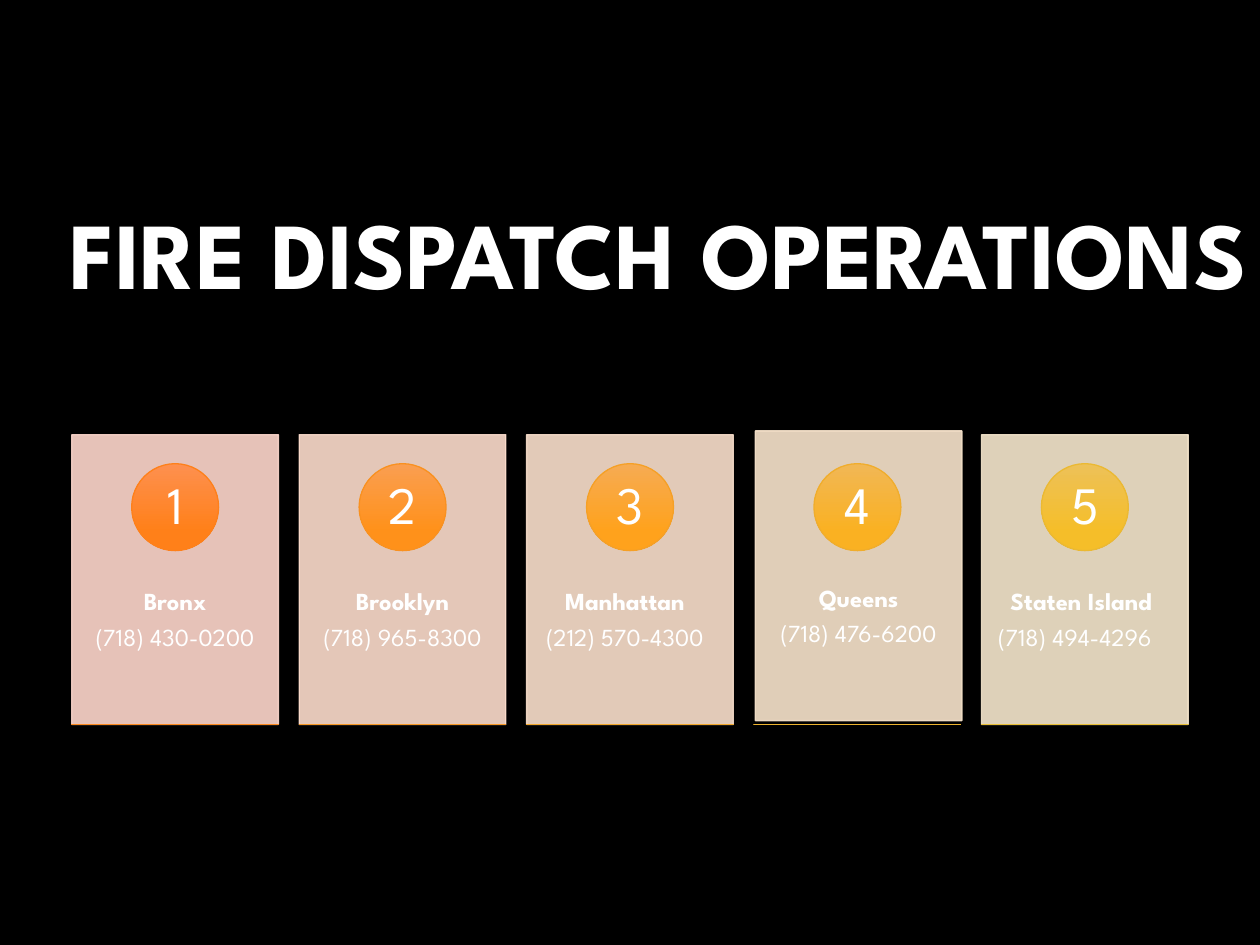
from lxml import etree
from pptx import Presentation
from pptx import util as u
from pptx.dml.color import RGBColor
from pptx.enum import shapes, text
from pptx.oxml import ns

FONT = "League Spartan"
BLACK = RGBColor(0, 0, 0)
WHITE = RGBColor(255, 255, 255)


def palette(codes):
    return [RGBColor.from_string(code) for code in codes.split()]


# One colour per borough, from left to right
CARD_COLORS = palette("FFD8CD FDDDCD FBE1CD F9E5CD F7E8CE")
CIRCLE_TOPS = palette("FE904F FA9E51 F6AB53 F1B755 EDC158")
CIRCLE_BOTTOMS = palette("FF8019 FF911A FFA21C FAB122 F5BE29")
CIRCLE_LINES = palette("FE801A F99120 F5A026 F0AD2C EBB932")
STRIP_TOPS = palette("FC9750 F8A552 F4B154 EFBC56 EBC659")
STRIP_BOTTOMS = palette("FF881A FF991B FCA91F F7B726 F2C42C")
STRIP_LINES = palette("FC891D F79823 F2A729 EEB42F E9BF35")

# Name, phone, card shift (right, down), extra right inset, alignment, name indent
CENTER, LEFT = text.PP_ALIGN.CENTER, text.PP_ALIGN.LEFT
BOROUGHS = [
    ("Bronx", "(718) 430-0200", 0, 0, 0, CENTER, 0),
    ("Brooklyn", "(718) 965-8300", 0, 0, 0, CENTER, 0),
    ("Manhattan", "(212) 570-4300", 0, 0, 0.08, CENTER, 0),
    ("Queens", "(718) 476-6200", 0.01, -0.03, 0, CENTER, 0),
    ("Staten Island", "(718) 494-4296", 0, 0, 0, LEFT, 0.1),
]
CARD_LEFT, CARD_TOP, CARD_WIDTH, CARD_HEIGHT = 0.57, 3.45, 1.64, 2.3
CARD_STEP = 1.805
CIRCLE_TOP, CIRCLE_SIZE = 3.68, 0.69


def style_paragraph(paragraph, size, bold, alignment):
    paragraph.alignment = alignment
    paragraph.line_spacing = 0.9
    for run in paragraph.runs:
        run.font.name = FONT
        run.font.size = u.Pt(size)
        run.font.bold = bold
        run.font.color.rgb = WHITE


presentation = Presentation()
presentation.slide_width = u.Inches(10)
presentation.slide_height = u.Inches(7.5)
slide = presentation.slides.add_slide(presentation.slide_layouts[6])
slide.background.fill.solid()
slide.background.fill.fore_color.rgb = BLACK

# Title, set below the middle of its box
title = slide.shapes.add_textbox(u.Inches(0), u.Inches(0.5), u.Inches(10), u.Inches(2.58))
frame = title.text_frame
frame.word_wrap = True
frame.vertical_anchor = text.MSO_ANCHOR.MIDDLE
frame.margin_top = u.Inches(0.58)
frame.text = "FIRE DISPATCH OPERATIONS"
style_paragraph(frame.paragraphs[0], 54, True, text.PP_ALIGN.RIGHT)

for index, (name, phone, shift_x, shift_y, inset, alignment, indent) in enumerate(BOROUGHS):
    left = CARD_LEFT + index * CARD_STEP

    # Card with name and phone number
    card = slide.shapes.add_shape(
        shapes.MSO_SHAPE.RECTANGLE, u.Inches(left + shift_x), u.Inches(CARD_TOP + shift_y),
        u.Inches(CARD_WIDTH), u.Inches(CARD_HEIGHT))
    card.shadow.inherit = False
    card.fill.solid()
    card.fill.fore_color.rgb = CARD_COLORS[index]
    card.line.color.rgb = CARD_COLORS[index]
    card.line.width = u.Pt(0.75)
    for color in card._element.spPr.iter(ns.qn("a:srgbClr")):
        etree.SubElement(color, ns.qn("a:alpha")).set("val", "90000")
    frame = card.text_frame
    frame.word_wrap = True
    frame.vertical_anchor = text.MSO_ANCHOR.TOP
    frame.margin_left = u.Inches(0.13)
    frame.margin_right = u.Inches(0.13 + inset)
    frame.margin_top = u.Inches(1.23)
    frame.text = f"{name}\n{phone}"
    for paragraph, bold in zip(frame.paragraphs, (True, False)):
        style_paragraph(paragraph, 14, bold, alignment)
        paragraph.space_after = u.Pt(5)
    if indent:
        frame.paragraphs[0]._p.get_or_add_pPr().set("indent", str(u.Inches(indent)))

    # Numbered circle, and the thin strip along the foot of the card
    circle = slide.shapes.add_shape(
        shapes.MSO_SHAPE.OVAL, u.Inches(left + (CARD_WIDTH - CIRCLE_SIZE) / 2),
        u.Inches(CIRCLE_TOP), u.Inches(CIRCLE_SIZE), u.Inches(CIRCLE_SIZE))
    strip = slide.shapes.add_shape(
        shapes.MSO_SHAPE.RECTANGLE, u.Inches(left), u.Inches(CARD_TOP + CARD_HEIGHT),
        u.Inches(CARD_WIDTH), u.Inches(0))
    for shape, tops, bottoms, lines in (
            (circle, CIRCLE_TOPS, CIRCLE_BOTTOMS, CIRCLE_LINES),
            (strip, STRIP_TOPS, STRIP_BOTTOMS, STRIP_LINES)):
        shape.shadow.inherit = False
        shape.fill.gradient()
        shape.fill.gradient_angle = 270
        first, last = shape.fill.gradient_stops
        first.color.rgb, first.position = tops[index], 0
        last.color.rgb, last.position = bottoms[index], 0.78
        shape.line.color.rgb = lines[index]
        shape.line.width = u.Pt(0.75)

    frame = circle.text_frame
    frame.vertical_anchor = text.MSO_ANCHOR.MIDDLE
    frame.margin_left = frame.margin_right = u.Inches(0.05)
    frame.margin_top = frame.margin_bottom = u.Inches(0.01)
    frame.text = str(index + 1)
    style_paragraph(frame.paragraphs[0], 30, False, CENTER)

presentation.save("out.pptx")
